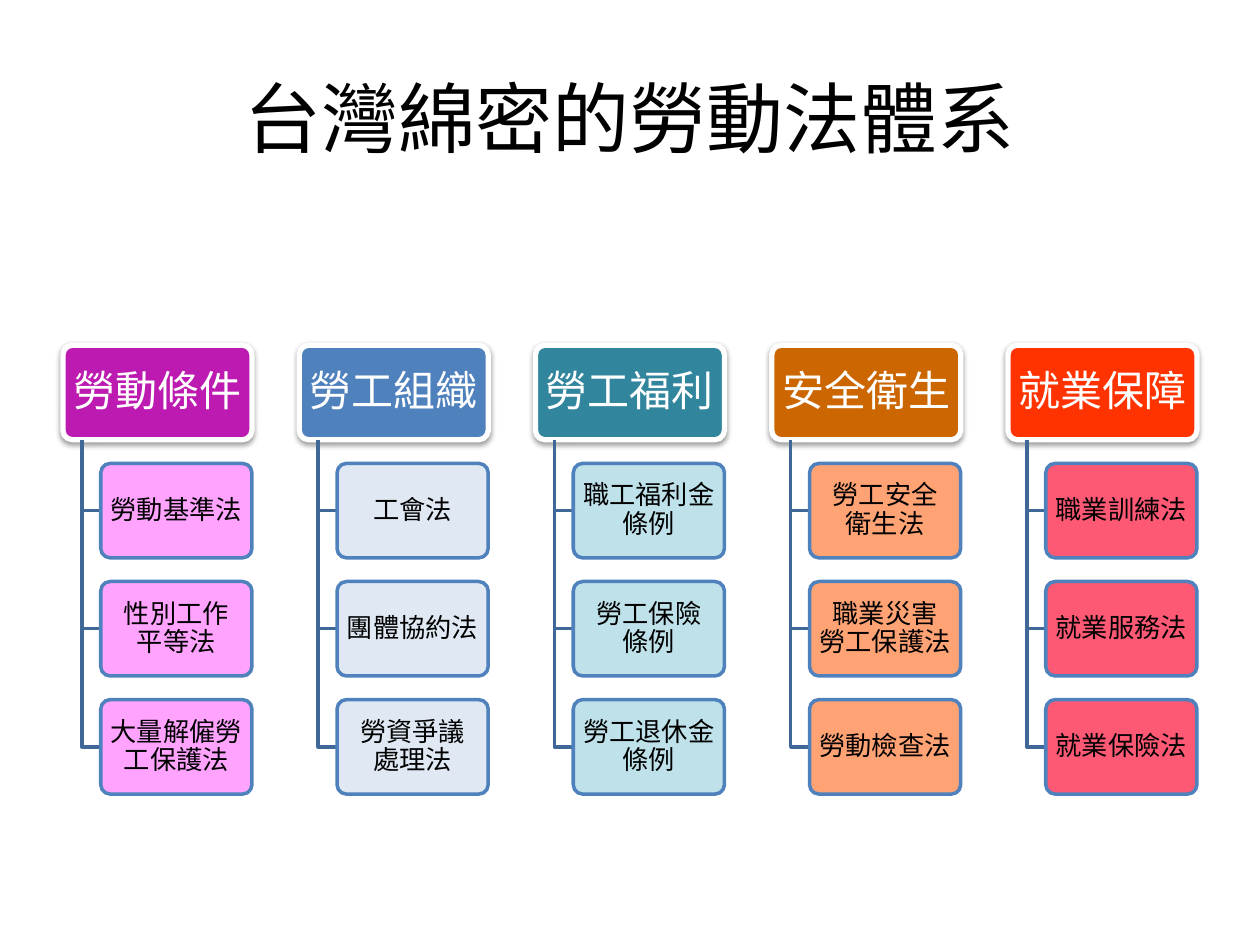
"""Build a slide that charts five branches of labour law and their acts."""
from dataclasses import dataclass

from lxml.etree import SubElement
from pptx import Presentation
from pptx.dml.color import RGBColor
from pptx.enum.shapes import MSO_SHAPE
from pptx.enum.text import MSO_ANCHOR, PP_ALIGN
from pptx.oxml.ns import qn
from pptx.shapes.autoshape import Shape
from pptx.slide import Slide
from pptx.util import Inches, Pt

COLORS = {
    "black": "000000",
    "white": "FFFFFF",
    "card_line": "4F81BD",
    "link": "3F6797",
}
TITLE_FONT = "Calibri"
BODY_FONT = "Noto Sans CJK SC"
LEFT, TOP = 0.5, 2.74
COLUMN_STEP, ROW_STEP = 1.875, 0.9375
HEADER_WIDTH, CARD_WIDTH, BOX_HEIGHT = 1.5, 1.2, 0.75
LINK_INDENT, CARD_INDENT = 0.15, 0.3


@dataclass(frozen=True)
class Branch:
    name: str
    header_fill: str
    card_fill: str
    acts: tuple[str, ...]
    opacity: int = 90


@dataclass(frozen=True)
class BoxStyle:
    width: float
    fill: str
    line: str
    line_width: float
    text_color: str
    text_size: float
    side_inset: float
    end_inset: float
    opacity: int = 100


BRANCHES = (
    Branch("勞動條件", "BC1AB0", "FF99FF",
           ("勞動基準法", "性別工作\n平等法", "大量解僱勞工保護法")),
    Branch("勞工組織", "4F81BD", "DCE6F2",
           ("工會法", "團體協約法", "勞資爭議\n處理法")),
    Branch("勞工福利", "31859C", "B7DEE8",
           ("職工福利金條例", "勞工保險\n條例", "勞工退休金條例")),
    Branch("安全衛生", "CC6600", "FF9966",
           ("勞工安全\n衛生法", "職業災害\n勞工保護法", "勞動檢查法")),
    Branch("就業保障", "FF3300", "FD5974",
           ("職業訓練法", "就業服務法", "就業保險法"), opacity=100),
)


def rgb(value: str) -> RGBColor:
    return RGBColor.from_string(value)


def write_text(box: Shape, text: str, style: BoxStyle) -> None:
    frame = box.text_frame
    frame.word_wrap = True
    frame.vertical_anchor = MSO_ANCHOR.MIDDLE
    frame.margin_left = frame.margin_right = Inches(style.side_inset)
    frame.margin_top = frame.margin_bottom = Inches(style.end_inset)
    para = frame.paragraphs[0]
    para.alignment = PP_ALIGN.CENTER
    para.line_spacing = 0.9
    for index, line in enumerate(text.split("\n")):
        if index:
            para.add_line_break()
        span = para.add_run()
        span.text = line
        span.font.name = BODY_FONT
        span.font.size = Pt(style.text_size)
        span.font.color.rgb = rgb(style.text_color)
        SubElement(span.font._element, qn("a:ea"), typeface=BODY_FONT)


def add_box(page: Slide, left: float, top: float, text: str, style: BoxStyle) -> Shape:
    box = page.shapes.add_shape(
        MSO_SHAPE.ROUNDED_RECTANGLE,
        Inches(left), Inches(top), Inches(style.width), Inches(BOX_HEIGHT),
    )
    box.adjustments[0] = 0.1
    box.shadow.inherit = False
    box.fill.solid()
    box.fill.fore_color.rgb = rgb(style.fill)
    if style.opacity < 100:
        color = box._element.spPr.find(qn("a:solidFill"))[0]
        SubElement(color, qn("a:alpha"), val=str(style.opacity * 1000))
    box.line.color.rgb = rgb(style.line)
    box.line.width = Pt(style.line_width)
    write_text(box, text, style)
    return box


def add_shadow(box: Shape) -> None:
    effects = box._element.spPr.find(qn("a:effectLst"))
    shadow = SubElement(
        effects, qn("a:outerShdw"), blurRad=str(Pt(3.1)), dist=str(Pt(1.6)),
        dir="5400000", rotWithShape="0",
    )
    color = SubElement(shadow, qn("a:srgbClr"), val=COLORS["black"])
    SubElement(color, qn("a:alpha"), val="38000")


def add_link(page: Slide, left: float, right: float, top: float, bottom: float) -> None:
    builder = page.shapes.build_freeform(Inches(left), Inches(top))
    builder.add_line_segments(
        [(Inches(left), Inches(bottom)), (Inches(right), Inches(bottom))], close=False
    )
    link = builder.convert_to_shape()
    link.shadow.inherit = False
    link.fill.background()
    link.line.color.rgb = rgb(COLORS["link"])
    link.line.width = Pt(2)


def add_branch(page: Slide, left: float, branch: Branch) -> None:
    header_style = BoxStyle(HEADER_WIDTH, branch.header_fill, COLORS["white"], 3,
                            COLORS["white"], 24, 0.05, 0.03)
    card_style = BoxStyle(CARD_WIDTH, branch.card_fill, COLORS["card_line"], 2,
                          COLORS["black"], 15, 0.03, 0.02, branch.opacity)
    add_shadow(add_box(page, left, TOP, branch.name, header_style))
    for row, act in enumerate(branch.acts, start=1):
        card_left, card_top = left + CARD_INDENT, TOP + row * ROW_STEP
        add_link(page, left + LINK_INDENT, card_left,
                 TOP + BOX_HEIGHT, card_top + BOX_HEIGHT / 2)
        add_box(page, card_left, card_top, act, card_style)


def add_title(page: Slide, text: str) -> None:
    title = page.shapes.title
    title.left, title.top = Inches(0.5), Inches(0.3)
    title.width, title.height = Inches(9), Inches(1.25)
    title.text_frame.vertical_anchor = MSO_ANCHOR.MIDDLE
    para = title.text_frame.paragraphs[0]
    para.alignment = PP_ALIGN.CENTER
    span = para.add_run()
    span.text = text
    span.font.name = TITLE_FONT
    span.font.size = Pt(44)
    span.font.color.rgb = rgb(COLORS["black"])


def main() -> None:
    deck = Presentation()
    deck.slide_width, deck.slide_height = Inches(10), Inches(7.5)
    page = deck.slides.add_slide(deck.slide_layouts[5])
    add_title(page, "台灣綿密的勞動法體系")
    for column, branch in enumerate(BRANCHES):
        add_branch(page, LEFT + column * COLUMN_STEP, branch)
    deck.save("out.pptx")


if __name__ == "__main__":
    main()
